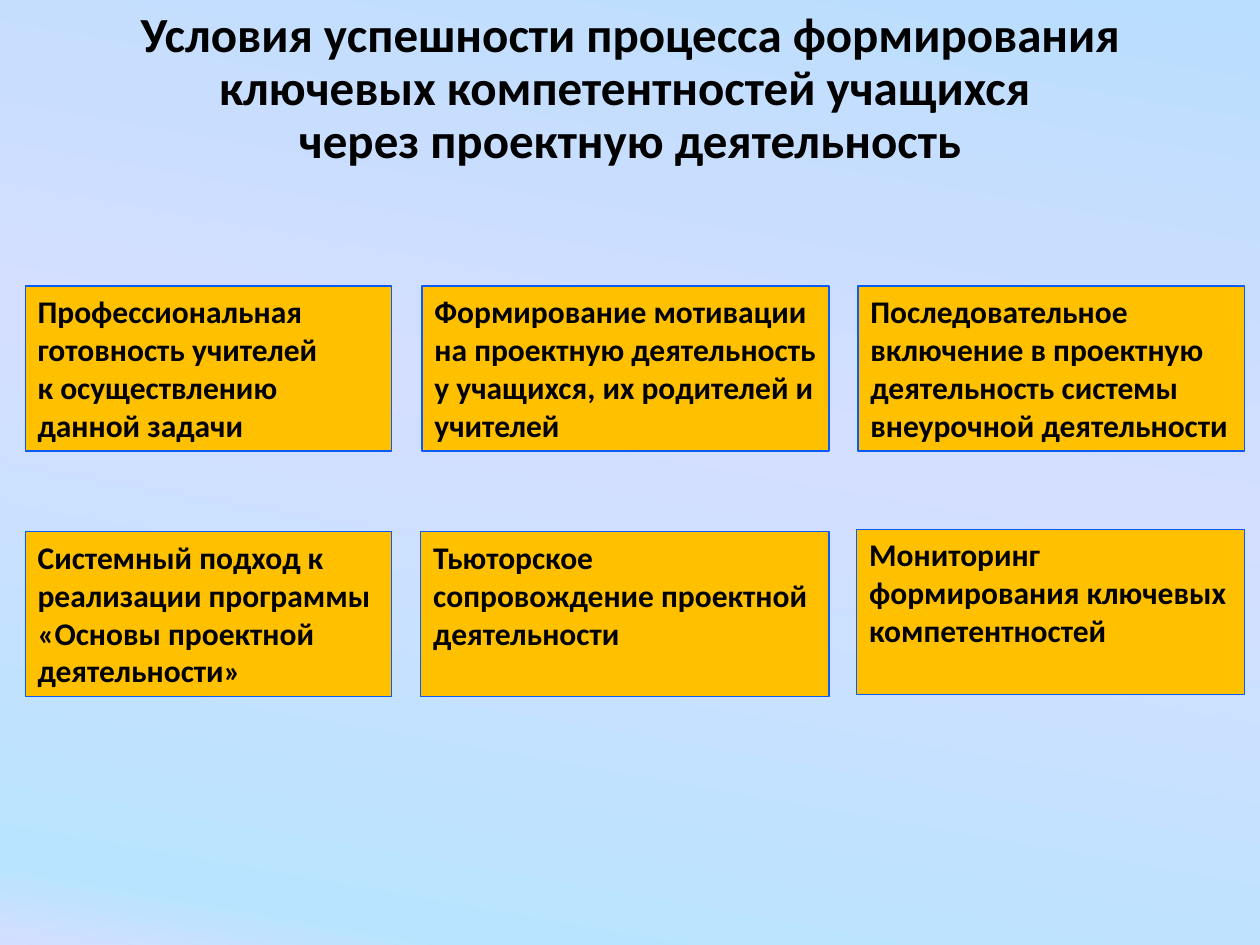
from lxml import etree
from pptx import Presentation
from pptx.dml.color import RGBColor
from pptx.enum import shapes, text
from pptx.oxml import ns
from pptx.util import Inches, Pt

THEME = {
    "font": "Calibri", "title_size": 28, "box_size": 18, "ink": "000000",
    "box_fill": "FFC000", "box_line": "0D5BF7", "line_width": 0.75,
    "bg_angle": 100,
    "bg_stops": [(0, "BADEFE"), (45, "D4DEFF"), (93, "B9E4FF"),
                 (100, "D4DEFF"), (100, "96AB94")],
}


def format_text(tf, size, align):
    for p in tf.paragraphs:
        p.alignment = align
        for r in p.runs:
            values = {"name": THEME["font"], "size": Pt(size), "bold": True}
            for name, value in values.items():
                setattr(r.font, name, value)
            r.font.color.rgb = RGBColor.from_string(THEME["ink"])


prs = Presentation()
prs.slide_width, prs.slide_height = Inches(10), Inches(7.5)
s = prs.slides.add_slide(prs.slide_layouts[5])

# Gradient background
fill = s.background.fill
fill.gradient()
stops = s.background._cSld.find(".//" + ns.qn("a:gsLst"))
for stop in list(stops):
    stops.remove(stop)
for percent, color in THEME["bg_stops"]:
    stop = etree.SubElement(stops, ns.qn("a:gs"), pos=str(percent * 1000))
    etree.SubElement(stop, ns.qn("a:srgbClr"), val=color)
lin = s.background._cSld.find(".//" + ns.qn("a:lin"))
lin.set("ang", str(THEME["bg_angle"] * 60000))

# Title, raised above the middle of its frame
title = s.shapes.title
title.left, title.top = Inches(0.69), Inches(0.4)
title.width, title.height = Inches(8.62), Inches(1.45)
tf = title.text_frame
tf.text = ("Условия успешности процесса формирования ключевых "
           "компетентностей учащихся \vчерез проектную деятельность")
frame = {"word_wrap": True, "auto_size": text.MSO_AUTO_SIZE.NONE,
         "vertical_anchor": text.MSO_ANCHOR.BOTTOM,
         "margin_bottom": Inches(0.51)}
for name, value in frame.items():
    setattr(tf, name, value)
tf.paragraphs[0].line_spacing = 0.9
format_text(tf, THEME["title_size"], text.PP_ALIGN.CENTER)

# Conditions: left, top, width, wording
BOX_HEIGHT = 1.31
conditions = [
    (0.2, 2.27, 2.91, "Профессиональная готовность учителей\n"
                      "к осуществлению данной задачи"),
    (3.35, 2.27, 3.23, "Формирование мотивации на проектную деятельность "
                       "у учащихся, их родителей и учителей"),
    (6.81, 2.27, 3.07, "Последовательное включение в проектную деятельность "
                       "системы внеурочной деятельности"),
    (0.2, 4.22, 2.91, "Системный подход к реализации программы "
                      "«Основы проектной деятельности»"),
    (3.34, 4.22, 3.24, "Тьюторское сопровождение проектной деятельности"),
    (6.8, 4.2, 3.08, "Мониторинг формирования ключевых компетентностей"),
]
for left, top, width, wording in conditions:
    sp = s.shapes.add_shape(shapes.MSO_SHAPE.RECTANGLE, Inches(left),
                            Inches(top), Inches(width), Inches(BOX_HEIGHT))
    sp.shadow.inherit = False
    sp.fill.solid()
    sp.fill.fore_color.rgb = RGBColor.from_string(THEME["box_fill"])
    sp.line.color.rgb = RGBColor.from_string(THEME["box_line"])
    sp.line.width = Pt(THEME["line_width"])
    tf = sp.text_frame
    tf.text = wording
    tf.word_wrap = True
    tf.vertical_anchor = text.MSO_ANCHOR.TOP
    format_text(tf, THEME["box_size"], text.PP_ALIGN.LEFT)

prs.save("out.pptx")
